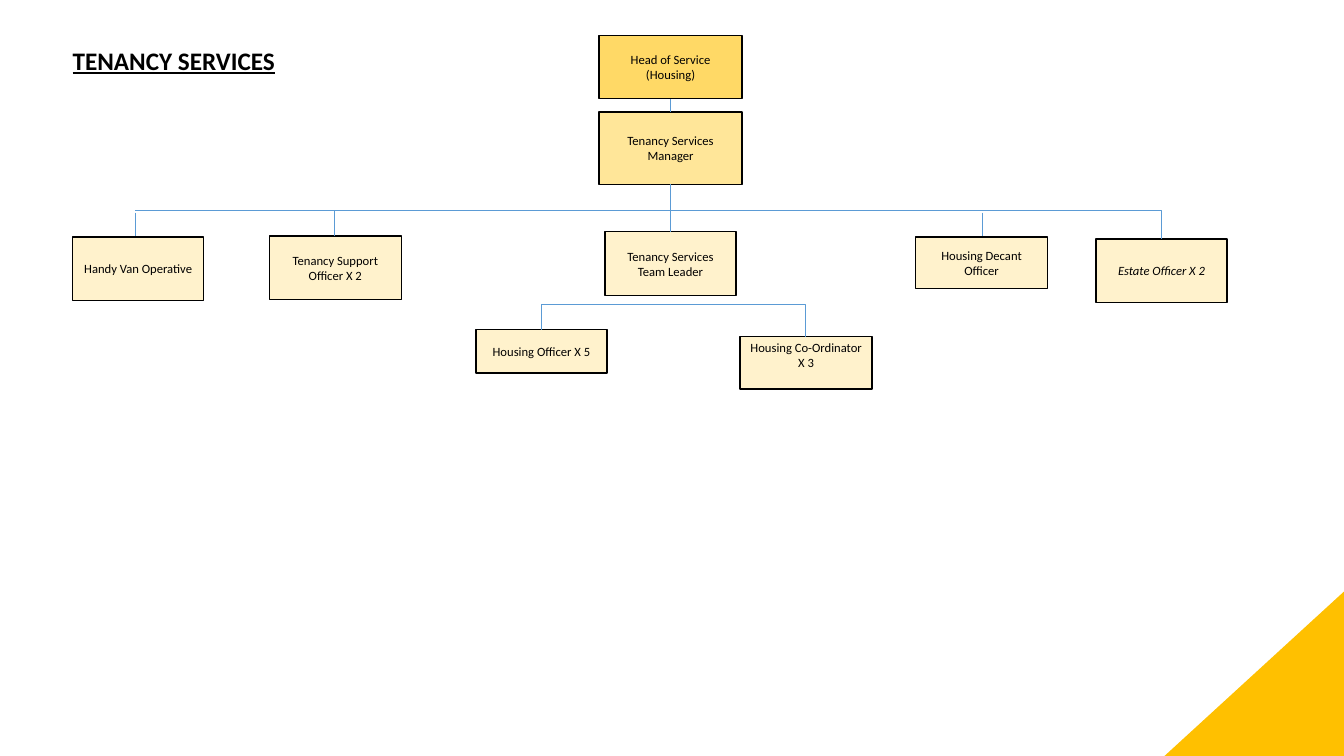
from dataclasses import dataclass
from lxml.etree import SubElement
from pptx import Presentation
from pptx.dml.color import RGBColor as RGB
from pptx.enum.shapes import MSO_CONNECTOR as LINE, MSO_SHAPE as SHAPE
from pptx.enum.text import MSO_ANCHOR as ANCHOR, MSO_AUTO_SIZE as FIT, PP_ALIGN as ALIGN
from pptx.oxml.ns import qn
from pptx.util import Inches, Pt


@dataclass(frozen=True)
class Theme:
    font: str = "Calibri"
    title: int = 18
    body: int = 9
    ink: str = "000000"
    link: str = "5B9BD5"
    head: str = "FFD966"
    manager: str = "FFE699"
    staff: str = "FFF2CC"
    accent: str = "FFC000"
    border: float = 1
    thin: float = 0.5


def write(tf, text, theme, size, align=ALIGN.CENTER, anchor=ANCHOR.MIDDLE,
          bold=False, italic=False, underline=False):
    tf.word_wrap = True
    tf.auto_size = FIT.NONE
    tf.vertical_anchor = anchor
    p = tf.paragraphs[0]
    p.alignment = align
    r = p.add_run()
    r.text = text
    r.font.name, r.font.size = theme.font, Pt(size)
    r.font.bold, r.font.italic, r.font.underline = bold, italic, underline
    r.font.color.rgb = RGB.from_string(theme.ink)


class OrgChart:
    """Draws chart elements on a grid of tenth-of-an-inch columns and rows."""

    def __init__(self, slide, theme):
        self.slide, self.theme = slide, theme

    def at(self, *cells):
        return [Inches(cell / 10) for cell in cells]

    def title(self, text, *place):
        sp = self.slide.shapes.title
        sp.left, sp.top, sp.width, sp.height = self.at(*place)
        write(sp.text_frame, text, self.theme, self.theme.title, align=ALIGN.LEFT,
              anchor=ANCHOR.TOP, bold=True, underline=True)

    def shape(self, kind, place, fill):
        sp = self.slide.shapes.add_shape(kind, *self.at(*place))
        sp.shadow.inherit = False
        sp.fill.solid()
        sp.fill.fore_color.rgb = RGB.from_string(fill)
        sp.line.fill.background()
        return sp

    def box(self, text, place, fill=None, inset=0.5, **style):
        sp = self.shape(SHAPE.RECTANGLE, place, fill or self.theme.staff)
        sp.line.color.rgb = RGB.from_string(self.theme.ink)
        sp.line.width = Pt(self.theme.border)
        sp.text_frame.margin_top = self.at(inset)[0]
        write(sp.text_frame, text, self.theme, self.theme.body, **style)
        return sp

    def corner(self, *place):
        sp = self.shape(SHAPE.RIGHT_TRIANGLE, place, self.theme.accent)
        sp._element.spPr.xfrm.set("flipH", "1")

    def line(self, x1, y1, x2, y2, kind=LINE.STRAIGHT):
        sp = self.slide.shapes.add_connector(kind, *self.at(x1, y1, x2, y2))
        sp.line.color.rgb = RGB.from_string(self.theme.link)
        sp.line.width = Pt(self.theme.thin)
        SubElement(sp._element.spPr, qn("a:effectLst"))
        return sp

    def join(self, upper, lower):
        sp = self.line(0, 0, 0, 0)
        sp.begin_connect(upper, 2)
        sp.end_connect(lower, 0)

    def bracket(self, x1, y1, x2, y2, bar):
        sp = self.line(x1, y1, x2, y2, LINE.ELBOW)
        wide, high = x2 - x1, y2 - y1
        sp.left, sp.top, sp.width, sp.height = self.at(
            (x1 + x2 - high) / 2, (y1 + y2 - wide) / 2, high, wide)
        spPr = sp._element.spPr
        spPr.xfrm.set("rot", str(270 * 60000))
        spPr.xfrm.set("flipH", "1")
        geom = spPr.find(qn("a:prstGeom"))
        av = geom.find(qn("a:avLst"))
        if av is None:
            av = SubElement(geom, qn("a:avLst"))
        ratio = round((bar - y1) / high * 100000)
        SubElement(av, qn("a:gd"), name="adj1", fmla=f"val {ratio}")


def main():
    prs = Presentation()
    prs.slide_width, prs.slide_height = Inches(13.33), Inches(7.5)
    theme = Theme()
    chart = OrgChart(prs.slides.add_slide(prs.slide_layouts[5]), theme)

    chart.title("TENANCY SERVICES", 6.2, 4, 32.4, 4)
    chart.corner(115.5, 58.6, 17.9, 16.4)
    chart.line(13.4, 21.1, 13.4, 25.3)
    chart.line(97.4, 21.1, 97.4, 27.3)

    head = chart.box("Head of Service (Housing)", (59.4, 3.5, 14.2, 6.3), theme.head)
    manager = chart.box("Tenancy Services Manager", (59.4, 11.1, 14.2, 7.2), theme.manager)
    leader = chart.box("Tenancy Services Team Leader", (60, 23, 13, 6.3))
    chart.box("Handy Van Operative", (7.2, 23.5, 13, 6.3))
    chart.box("Tenancy Support Officer X 2", (26.7, 23.4, 13.1, 6.3))
    chart.box("Housing Decant Officer", (90.8, 23.5, 13.1, 5.1))
    chart.box("Estate Officer X 2", (108.7, 23.7, 13, 6.3), italic=True)
    chart.box("Housing Officer X 5", (47.2, 32.7, 13, 4.3))
    chart.box("Housing Co-Ordinator X 3", (73.4, 33.4, 13.1, 5.2),
              inset=0.3, anchor=ANCHOR.TOP)

    chart.join(head, manager)
    chart.join(manager, leader)
    chart.bracket(33.2, 23.4, 115.2, 23.7, bar=20.9)
    chart.bracket(53.7, 32.7, 79.9, 33.4, bar=30.2)
    chart.line(33.3, 20.9, 13.4, 20.9)
    prs.save("out.pptx")


if __name__ == "__main__":
    main()
